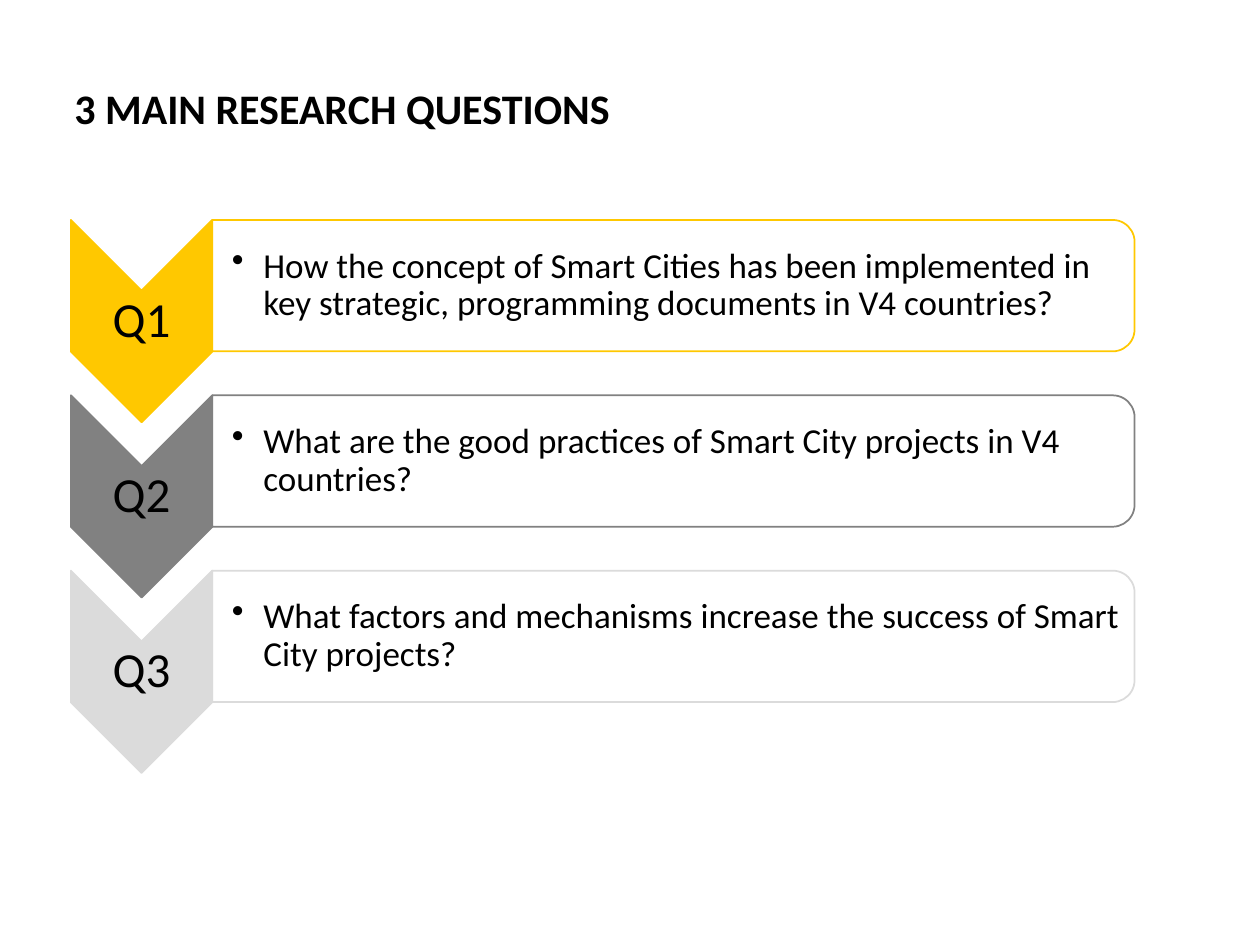
import pptx
import pptx.util
import pptx.dml.color
import pptx.enum.shapes
import pptx.enum.text
import pptx.oxml.ns
from lxml import etree

Pt = pptx.util.Pt
SHAPE = pptx.enum.shapes.MSO_SHAPE
ALIGN = pptx.enum.text.PP_ALIGN
ANCHOR = pptx.enum.text.MSO_ANCHOR

TITLE = "3 MAIN RESEARCH QUESTIONS"
QUESTIONS = [
    ("Q1", "How the concept of Smart Cities has been implemented in key strategic, "
           "programming documents in V4 countries?", "FFC800"),
    ("Q2", "What are the good practices of Smart City projects in V4 countries?", "818181"),
    ("Q3", "What factors and mechanisms increase the success of Smart City projects?", "DBDBDB"),
]

TOP, PITCH = 125.7, 100.2
LEFT, CHEVRON_W, CHEVRON_H = 40.5, 80.8, 115.6
PANEL_W, PANEL_H = 527, 75.1
LABEL_H, TEXT_INSET = 34.8, 3.7


def rgb(hex_color):
    return pptx.dml.color.RGBColor.from_string(hex_color)


def add_tag(parent, tag, **attributes):
    return etree.SubElement(parent, pptx.oxml.ns.qn(tag), **attributes)


def write(sp, text, size, bold=False, align=ALIGN.LEFT, anchor=ANCHOR.MIDDLE,
          spacing=0.9, insets=(1.4, 1.4, 1.4, 1.4), bullet=False):
    tf = sp.text_frame
    tf.word_wrap = True
    tf.auto_size = pptx.enum.text.MSO_AUTO_SIZE.NONE
    tf.vertical_anchor = anchor
    tf.margin_left, tf.margin_top, tf.margin_right, tf.margin_bottom = map(Pt, insets)
    p = tf.paragraphs[0]
    p.alignment = align
    p.line_spacing = spacing
    p.space_before = Pt(0)
    if bullet:
        pPr = p._p.get_or_add_pPr()
        pPr.set("marL", str(Pt(18)))
        pPr.set("indent", str(-Pt(18)))
        add_tag(pPr, "a:buChar", char="•")
    r = p.add_run()
    r.text = text
    r.font.name = "Calibri"
    r.font.size = Pt(size)
    r.font.bold = bold
    r.font.color.rgb = rgb("000000")


def add_turned_shape(s, kind, x, y, w, h, fill, line):
    """Add a shape turned by 90 degrees that covers the given area once turned."""
    sp = s.shapes.add_shape(kind, Pt(x + (w - h) / 2), Pt(y + (h - w) / 2), Pt(h), Pt(w))
    sp.rotation = 90
    sp.shadow.inherit = False
    sp.fill.solid()
    sp.fill.fore_color.rgb = rgb(fill)
    sp.line.color.rgb = rgb(line)
    sp.line.width = Pt(1)
    return sp


def add_question(s, y, label, question, color):
    add_turned_shape(s, SHAPE.CHEVRON, LEFT, y, CHEVRON_W, CHEVRON_H, color, color)
    label_y = y + (CHEVRON_H - LABEL_H) / 2
    sp = s.shapes.add_textbox(Pt(LEFT), Pt(label_y), Pt(CHEVRON_W), Pt(LABEL_H))
    write(sp, label, 28, align=ALIGN.CENTER)

    panel_x = LEFT + CHEVRON_W
    panel = add_turned_shape(s, SHAPE.ROUND_2_SAME_RECTANGLE, panel_x, y,
                             PANEL_W, PANEL_H, "FFFFFF", color)
    fill_color = panel._element.spPr.find(".//" + pptx.oxml.ns.qn("a:srgbClr"))
    add_tag(fill_color, "a:alpha", val="90000")
    sp = s.shapes.add_textbox(Pt(panel_x), Pt(y + TEXT_INSET),
                              Pt(PANEL_W - TEXT_INSET), Pt(PANEL_H - 2 * TEXT_INSET))
    write(sp, question, 20, insets=(11.2, 1, 1, 1), bullet=True)


def main():
    prs = pptx.Presentation()
    prs.slide_width, prs.slide_height = Pt(720), Pt(540)
    s = prs.slides.add_slide(prs.slide_layouts[5])

    title = s.shapes.title
    title.left, title.top, title.width, title.height = Pt(35.3), Pt(39.6), Pt(665.3), Pt(36.7)
    write(title, TITLE, 24, bold=True, anchor=ANCHOR.TOP, spacing=1.13,
          insets=(7.2, 3.6, 7.2, 3.6))

    for i, (label, question, color) in enumerate(QUESTIONS):
        add_question(s, TOP + i * PITCH, label, question, color)

    prs.save("out.pptx")


if __name__ == "__main__":
    main()
